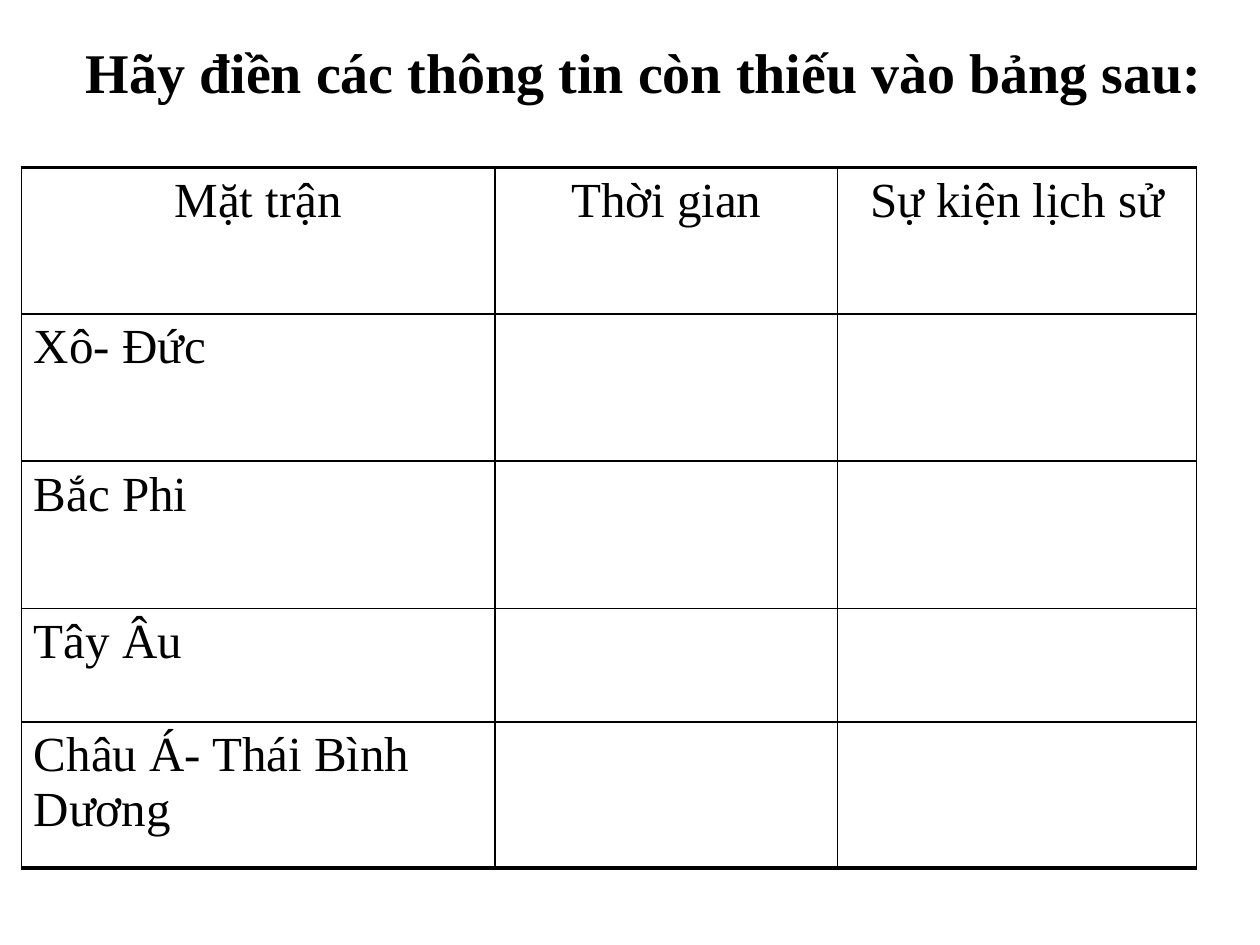
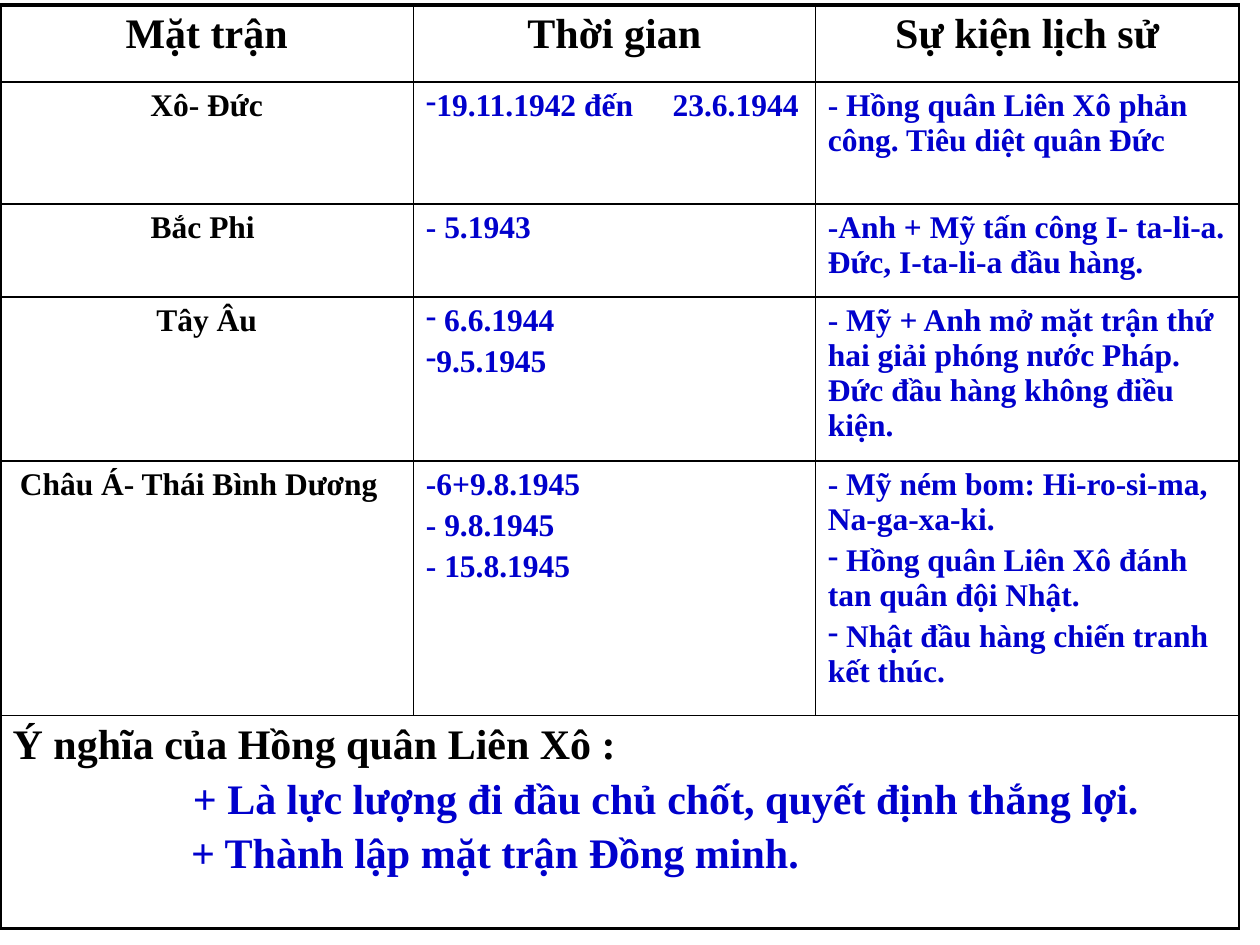
from lxml import etree
from pptx import Presentation
from pptx.dml.color import RGBColor
from pptx.enum.text import MSO_AUTO_SIZE, PP_ALIGN
from pptx.oxml.ns import qn
from pptx.util import Pt

COLOURS = {"text": "000000", "answer": "0000CC", "border": "000000"}
FONT = "Times New Roman"
THIN, THICK = 1, 2.25
CENTRE = {"alignment": PP_ALIGN.CENTER}

HEADINGS = ["Mặt trận", "Thời gian", "Sự kiện lịch sử"]
FRONTS = ["Xô- Đức", "Bắc Phi", "Tây Âu", "Châu Á- Thái Bình Dương"]


class Deck:
    """Holds the shared style and the current slide."""

    def __init__(self, width, height):
        self.presentation = Presentation()
        self.presentation.slide_width = Pt(width)
        self.presentation.slide_height = Pt(height)
        self.slide = None

    def add_slide(self):
        self.slide = self.presentation.slides.add_slide(self.presentation.slide_layouts[6])

    def add_text(self, frame, lines, size, bold=False, colour="text", alignment=PP_ALIGN.LEFT):
        """Fill a text frame; a line is a string or a dict of its own settings."""
        for index, line in enumerate(lines):
            line = line if isinstance(line, dict) else {"text": line}
            paragraph = frame.paragraphs[0] if index == 0 else frame.add_paragraph()
            paragraph.alignment = alignment
            if index:
                paragraph.space_before = Pt(0.2 * size)
            run = paragraph.add_run()
            run.text = line["text"]
            font_format = {"name": FONT, "size": Pt(size), "bold": bold}
            for name, value in font_format.items():
                setattr(run.font, name, value)
            run.font.color.rgb = RGBColor.from_string(COLOURS[line.get("colour", colour)])
            self.set_layout(paragraph, line)

    def set_layout(self, paragraph, line):
        properties = paragraph._p.get_or_add_pPr()
        properties.set("marL", str(Pt(line.get("indent", 0))))
        properties.set("indent", "0")
        if "bullet" in line:
            etree.SubElement(properties, qn("a:buChar"), char=line["bullet"])
        if "tab" in line:
            tabs = etree.SubElement(properties, qn("a:tabLst"))
            etree.SubElement(tabs, qn("a:tab"), pos=str(Pt(line["tab"])), algn="l")

    def add_title(self, text, left, top, width, height, indent):
        shape = self.slide.shapes.add_textbox(Pt(left), Pt(top), Pt(width), Pt(height))
        frame = shape.text_frame
        frame.word_wrap = True
        frame.auto_size = MSO_AUTO_SIZE.SHAPE_TO_FIT_TEXT
        self.add_text(frame, [{"text": text, "indent": indent}], size=32, bold=True)

    def add_table(self, left, top, widths, heights, left_border=THIN):
        shape = self.slide.shapes.add_table(len(heights), len(widths), Pt(left), Pt(top),
                                            Pt(sum(widths)), Pt(sum(heights)))
        table = shape.table
        table.first_row = table.horz_banding = False
        for column, width in zip(table.columns, widths):
            column.width = Pt(width)
        for row, height in zip(table.rows, heights):
            row.height = Pt(height)
        # Thick outer rules, thin inner rules
        last_row = len(heights) - 1
        for row_index, row in enumerate(table.rows):
            for column_index, cell in enumerate(row.cells):
                cell.fill.background()
                self.set_borders(cell, {
                    "a:lnL": THIN if column_index else left_border,
                    "a:lnR": THIN,
                    "a:lnT": THIN if row_index else THICK,
                    "a:lnB": THICK if row_index == last_row else THIN,
                })
        return table

    def set_borders(self, cell, widths):
        properties = cell._tc.get_or_add_tcPr()
        for position, (tag, width) in enumerate(widths.items()):
            line = etree.Element(qn(tag), w=str(Pt(width)))
            fill = etree.SubElement(line, qn("a:solidFill"))
            etree.SubElement(fill, qn("a:srgbClr"), val=COLOURS["border"])
            properties.insert(position, line)

    def fill_cell(self, table, row, column, lines, **style):
        self.add_text(table.cell(row, column).text_frame, lines, **style)

    def add_labels(self, table, heading_style, front_style):
        for column, heading in enumerate(HEADINGS):
            self.fill_cell(table, 0, column, [heading], **heading_style)
        for row, front in enumerate(FRONTS, start=1):
            self.fill_cell(table, row, 0, [front], **front_style)


def dash(text, **layout):
    return {"text": text, "bullet": "-", **layout}


# Dates and events for each front
ANSWERS = [
    ([dash("19.11.1942 đến\t23.6.1944", tab=141)],
     ["- Hồng quân Liên Xô phản công. Tiêu diệt quân Đức"]),
    (["- 5.1943"],
     ["-Anh + Mỹ tấn công I- ta-li-a. Đức, I-ta-li-a đầu hàng."]),
    ([dash(" 6.6.1944"), dash("9.5.1945")],
     ["- Mỹ + Anh mở mặt trận thứ hai giải phóng nước Pháp. "
      "Đức đầu hàng không điều kiện."]),
    (["-6+9.8.1945", "- 9.8.1945", "- 15.8.1945"],
     ["- Mỹ ném bom: Hi-ro-si-ma, Na-ga-xa-ki.",
      dash(" Hồng quân Liên Xô đánh tan quân đội Nhật."),
      dash(" Nhật đầu hàng chiến tranh kết thúc.")]),
]

MEANING = [
    "Ý nghĩa của Hồng quân Liên Xô :",
    {"text": "+ Là lực lượng đi đầu chủ chốt, quyết định thắng lợi.",
     "indent": 103, "colour": "answer"},
    {"text": "+ Thành lập mặt trận Đồng minh.", "indent": 102, "colour": "answer"},
]


def build_question(deck):
    deck.add_slide()
    table = deck.add_table(12.2, 95.8, [270.7, 195.8, 205.2], [83.5, 84.2, 84.2, 64.8, 83.5])
    deck.add_labels(table, {"size": 28, **CENTRE}, {"size": 28})
    deck.add_title("Hãy điền các thông tin còn thiếu vào bảng sau:", 0, 18, 756, 46, indent=42)


def build_answer(deck):
    deck.add_slide()
    table = deck.add_table(0, 2.9, [236.2, 229.7, 242.2],
                           [43.9, 69.8, 53.3, 93.6, 145.4, 121.7], left_border=THICK)
    deck.add_labels(table, {"size": 24, "bold": True, **CENTRE},
                    {"size": 18, "bold": True, **CENTRE})
    # Two front names sit slightly left of centre
    for row, extra in {2: 4.5, 4: 9}.items():
        table.cell(row, 0).margin_right = Pt(7.2 + extra)
    for row, answer in enumerate(ANSWERS, start=1):
        for column, lines in enumerate(answer, start=1):
            deck.fill_cell(table, row, column, lines, size=18, bold=True, colour="answer")
    # Closing row across all columns
    table.cell(5, 0).merge(table.cell(5, 2))
    deck.fill_cell(table, 5, 0, MEANING, size=24, bold=True)


def main():
    deck = Deck(720, 540)
    build_question(deck)
    build_answer(deck)
    deck.presentation.save("out.pptx")


if __name__ == "__main__":
    main()
